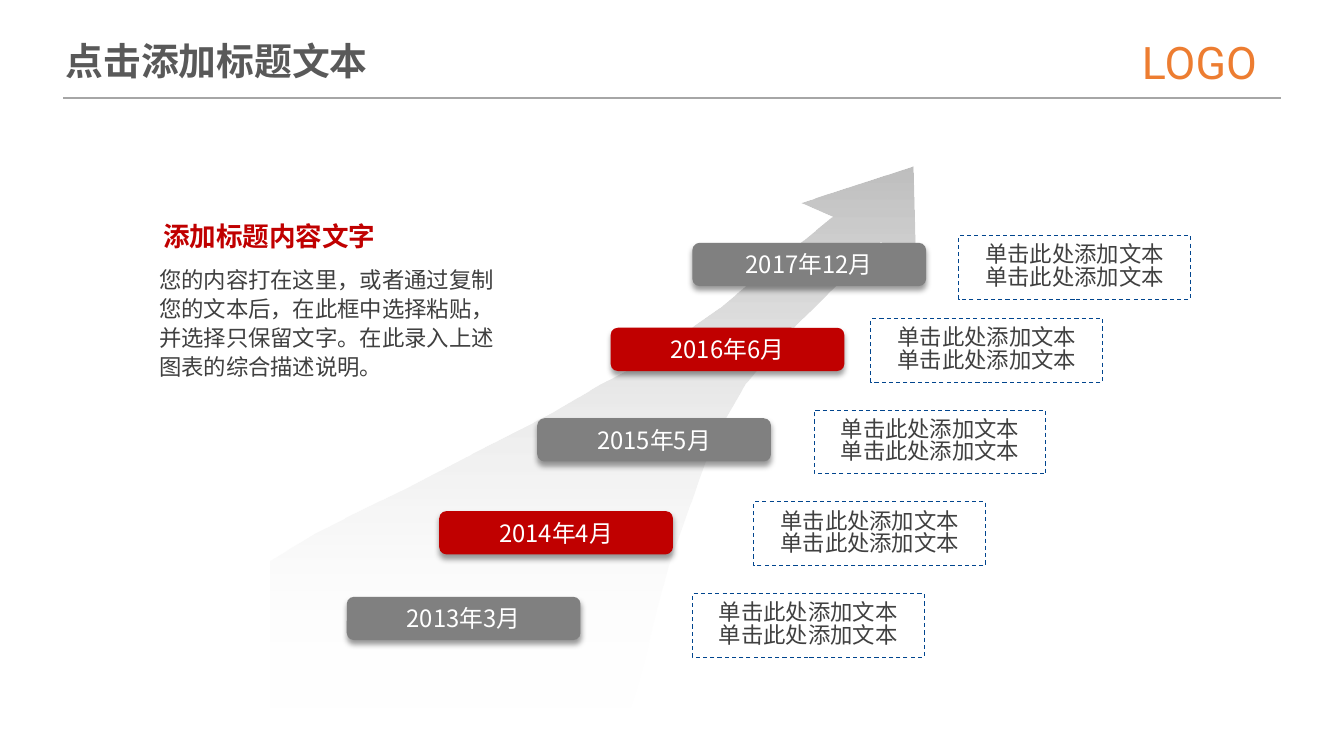
import pptx
import pptx.util
import pptx.dml.color
import pptx.enum.dml
import pptx.enum.shapes
import pptx.enum.text
import pptx.oxml
import pptx.oxml.ns
from lxml import etree

Cm, Pt = pptx.util.Cm, pptx.util.Pt
RGB = pptx.dml.color.RGBColor
SHAPE = pptx.enum.shapes.MSO_SHAPE
ALIGN = pptx.enum.text.PP_ALIGN
ANCHOR = pptx.enum.text.MSO_ANCHOR

# Content
TITLE = "点击添加标题文本"
LOGO = "LOGO"
HEADING = "添加标题内容文字"
BODY = ("您的内容打在这里，或者通过复制您的文本后，在此框中选择粘贴，"
        "并选择只保留文字。在此录入上述图表的综合描述说明。")
NOTE = ["单击此处添加文本"] * 2
# date, pill left and top, note left and top (cm)
MILESTONES = [
    ("2013年3月", (8.74, 15.04), (17.45, 14.96)),
    ("2014年4月", (11.07, 12.88), (19.0, 12.65)),
    ("2015年5月", (13.54, 10.54), (20.52, 10.34)),
    ("2016年6月", (15.39, 8.26), (21.95, 8.03)),
    ("2017年12月", (17.45, 6.12), (24.16, 5.94)),
]
PILL_SIZE = (5.89, 1.09)
NOTE_SIZE = (5.84, 1.6)
# Outline of the rising arrow, in hundredths of a cm
ARROW = [
    (683, 1412), (795, 1344), (909, 1285), (1036, 1224), (1191, 1143),
    (1384, 1044), (1509, 970), (1595, 925), (1712, 846), (1814, 775),
    (1908, 696), (1984, 638), (2096, 546), (2017, 511), (2299, 419),
    (2306, 668), (2217, 610), (2106, 719), (1971, 853), (1877, 968),
    (1831, 1049), (1788, 1133), (1760, 1209), (1735, 1283), (1684, 1425),
    (1648, 1560), (1623, 1666), (1588, 1788), (683, 1788),
]

# Colours and fonts
WHITE = RGB(0xFF, 0xFF, 0xFF)
SILVER = RGB(0xBF, 0xBF, 0xBF)
RULE = RGB(0xA6, 0xA6, 0xA6)
GREY = RGB(0x80, 0x80, 0x80)
TITLE_GREY = RGB(0x59, 0x59, 0x59)
TEXT = RGB(0x40, 0x40, 0x40)
RED = RGB(0xC0, 0x00, 0x00)
ORANGE = RGB(0xED, 0x7D, 0x31)
NAVY = RGB(0x01, 0x45, 0x8E)
SANS, LATIN = "Noto Sans CJK SC", "Roboto"

SHADOW = (f'<a:effectLst {pptx.oxml.ns.nsdecls("a")}>'
          '<a:outerShdw blurRad="50800" dist="38100" dir="5400000" algn="t" rotWithShape="0">'
          '<a:srgbClr val="000000"><a:alpha val="40000"/></a:srgbClr>'
          '</a:outerShdw></a:effectLst>')


def write(shape, lines, size, color, font=SANS, bold=False, align=ALIGN.LEFT,
          spacing=1.0, inset=(0.25, 0.13), wrap=True):
    tf = shape.text_frame
    frame = {"word_wrap": wrap, "vertical_anchor": ANCHOR.MIDDLE,
             "margin_left": Cm(inset[0]), "margin_right": Cm(inset[0]),
             "margin_top": Cm(inset[1]), "margin_bottom": Cm(inset[1])}
    for name, value in frame.items():
        setattr(tf, name, value)
    for i, line in enumerate(lines):
        p = tf.paragraphs[0] if i == 0 else tf.add_paragraph()
        p.alignment, p.line_spacing = align, spacing
        r = p.add_run()
        r.text = line
        for name, value in {"size": Pt(size), "name": font, "bold": bold}.items():
            setattr(r.font, name, value)
        r.font.color.rgb = color
        ea = etree.SubElement(r.font._element, pptx.oxml.ns.qn("a:ea"))
        ea.set("typeface", font)


def add_text(s, box, lines, size, color, **fmt):
    sp = s.shapes.add_textbox(*map(Cm, box))
    write(sp, lines, size, color, **fmt)
    return sp


def add_arrow(s):
    fb = s.shapes.build_freeform(*ARROW[0], scale=Cm(0.01))
    fb.add_line_segments(ARROW[1:], close=True)
    sp = fb.convert_to_shape()
    sp.shadow.inherit = False
    sp.line.fill.background()
    sp.fill.gradient()
    sp.fill.gradient_angle = 270
    top, bottom = sp.fill.gradient_stops
    top.color.rgb, bottom.color.rgb = SILVER, WHITE
    top.position, bottom.position = 0, 1
    clear = sp._element.spPr.findall(".//" + pptx.oxml.ns.qn("a:srgbClr"))[-1]
    etree.SubElement(clear, pptx.oxml.ns.qn("a:alpha")).set("val", "0")


def add_pill(s, at, date, color):
    sp = s.shapes.add_shape(SHAPE.ROUNDED_RECTANGLE, *map(Cm, at + PILL_SIZE))
    sp.fill.solid()
    sp.fill.fore_color.rgb = color
    sp.line.fill.background()
    sp._element.spPr.append(pptx.oxml.parse_xml(SHADOW))
    write(sp, [date], 17, WHITE, align=ALIGN.CENTER)


def add_note(s, at):
    sp = s.shapes.add_shape(SHAPE.RECTANGLE, *map(Cm, at + NOTE_SIZE))
    sp.shadow.inherit = False
    sp.fill.background()
    sp.line.color.rgb = NAVY
    sp.line.width = Pt(0.75)
    sp.line.dash_style = pptx.enum.dml.MSO_LINE.DASH
    write(sp, NOTE, 16, TEXT, align=ALIGN.CENTER, spacing=0.83)


def main():
    prs = pptx.Presentation()
    prs.slide_width, prs.slide_height = Cm(33.87), Cm(19.05)
    s = prs.slides.add_slide(prs.slide_layouts[6])

    # Header
    wide = {"inset": (0.33, 0.18), "wrap": False}
    add_text(s, (1.32, 0.76, 8.38, 1.5), [TITLE], 27, TITLE_GREY, bold=True, **wide)
    add_text(s, (28.45, 0.71, 4.22, 1.7), [LOGO], 32, ORANGE, font=LATIN, **wide)
    rule = s.shapes.add_connector(pptx.enum.shapes.MSO_CONNECTOR.STRAIGHT,
                                  Cm(1.6), Cm(2.47), Cm(32.28), Cm(2.47))
    rule.line.color.rgb = RULE
    rule.line.width = Pt(1)
    etree.SubElement(rule._element.spPr, pptx.oxml.ns.qn("a:effectLst"))

    # Timeline, pills alternating grey and red
    add_arrow(s)
    for i, (date, pill_at, note_at) in enumerate(MILESTONES):
        add_pill(s, pill_at, date, RED if i % 2 else GREY)
        add_note(s, note_at)

    # Description
    body = add_text(s, (3.76, 6.53, 9.42, 3.35), [BODY], 16, TEXT, spacing=1.08)
    body.text_frame.vertical_anchor = ANCHOR.TOP
    add_text(s, (3.86, 5.13, 8.0, 1.63), [HEADING], 19, RED, bold=True)

    prs.save("out.pptx")


if __name__ == "__main__":
    main()
